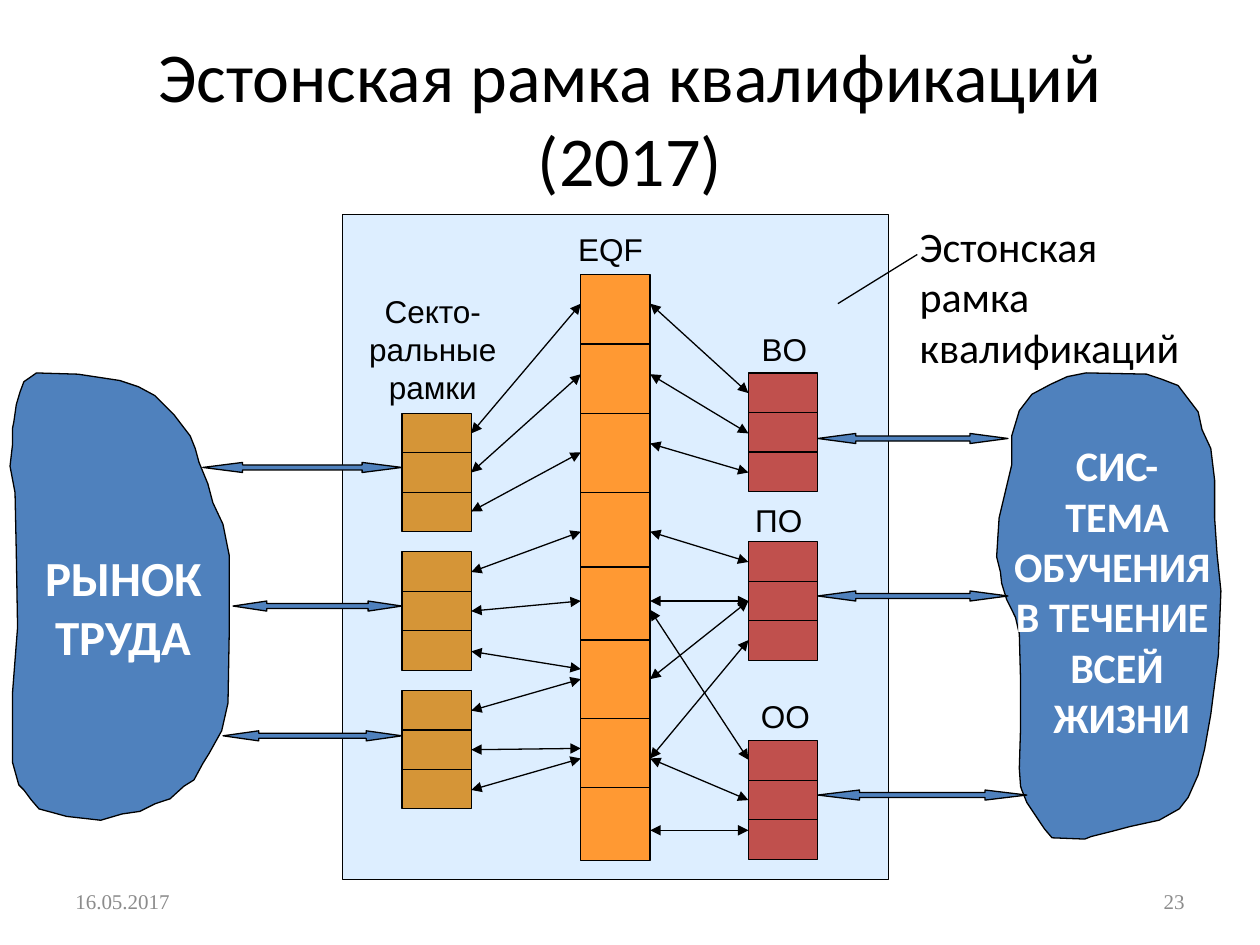
from lxml.etree import SubElement
from pptx import Presentation
from pptx.dml.color import RGBColor
from pptx.enum.shapes import MSO_CONNECTOR as Connector, MSO_SHAPE as Preset
from pptx.enum.text import MSO_ANCHOR as Anchor, PP_ALIGN as Align
from pptx.oxml.ns import qn
from pptx.util import Inches, Pt

BLACK, WHITE, BLUE = "000000", "FFFFFF", "4F81BD"
CELL_WIDTH = 0.55
SECTOR_LEFT, EQF_LEFT, LEVEL_LEFT = 3.19, 4.61, 5.94
SECTOR_RIGHT, EQF_RIGHT, LEVEL_RIGHT = (
    left + CELL_WIDTH for left in (SECTOR_LEFT, EQF_LEFT, LEVEL_LEFT))
BLOCK_HEIGHT = 0.94
EQF_TOP, EQF_BOTTOM = 2.18, 6.83
EQF_DIVIDERS = [2.73, 3.28, 3.91, 4.5, 5.08, 5.7, 6.25]
SECTOR_TOPS = [3.28 + 1.1 * i for i in range(3)]
LEVEL_TOPS = [2.96, 4.3, 5.88]

SECTOR_LINKS = [
    (3.44, 2.41), (3.75, 2.97), (4.06, 3.59),
    (4.54, 4.22), (4.85, 4.77), (5.17, 5.31),
    (5.64, 5.39), (5.95, 5.94), (6.27, 6.02),
]
LEVEL_LINKS = [
    (2.41, 3.12), (2.97, 3.44), (3.52, 3.75),
    (4.22, 4.46), (4.77, 4.77), (5.39, 4.77), (6.02, 5.08),
    (4.84, 6.03), (6.02, 6.35), (6.59, 6.59),
]
EXCHANGES = [
    (1.61, 3.67, SECTOR_LEFT), (1.85, 4.77, SECTOR_LEFT), (1.77, 5.8, SECTOR_LEFT),
    (LEVEL_RIGHT, 3.44, 8), (LEVEL_RIGHT, 4.69, 8), (LEVEL_RIGHT, 6.27, 8.15),
]

LABOUR_MARKET = [
    (0.11, 3.35), (0.13, 3.21), (0.16, 3.11), (0.19, 3.03), (0.29, 2.96),
    (0.62, 2.97), (0.95, 3.02), (1.1, 3.07), (1.23, 3.14), (1.38, 3.29),
    (1.51, 3.46), (1.55, 3.56), (1.58, 3.67), (1.65, 3.84), (1.69, 3.99),
    (1.77, 4.16), (1.82, 4.41), (1.82, 5), (1.81, 5.58), (1.76, 5.8),
    (1.66, 5.98), (1.61, 6.06), (1.54, 6.19), (1.46, 6.24), (1.35, 6.34),
    (1.23, 6.38), (1.11, 6.44), (0.97, 6.46), (0.8, 6.51), (0.53, 6.48),
    (0.31, 6.42), (0.25, 6.35), (0.19, 6.27), (0.15, 6.23), (0.1, 6.05),
    (0.1, 5.5), (0.14, 4.98), (0.13, 4.4), (0.12, 3.91), (0.08, 3.7),
    (0.1, 3.53), (0.1, 3.4),
]
LIFELONG_LEARNING = [
    (7.93, 4.11), (7.98, 3.9), (8.03, 3.69), (8.03, 3.46), (8.09, 3.26),
    (8.19, 3.13), (8.34, 3.05), (8.47, 2.99), (8.62, 2.96), (9.1, 2.97),
    (9.22, 3.01), (9.35, 3.06), (9.51, 3.27), (9.54, 3.41), (9.61, 3.56),
    (9.64, 3.81), (9.64, 4.11), (9.66, 4.4), (9.69, 4.69), (9.67, 5.2),
    (9.61, 5.67), (9.56, 5.95), (9.51, 6.15), (9.43, 6.33), (9.36, 6.42),
    (9.2, 6.51), (8.97, 6.56), (8.82, 6.6), (8.66, 6.64), (8.61, 6.66),
    (8.35, 6.65), (8.29, 6.58), (8.15, 6.37), (8.11, 6.27), (8.1, 6.24),
    (8.09, 6.1), (8.1, 5.78), (8.1, 5.4), (8.09, 5.03), (8.06, 4.9),
    (7.99, 4.76), (7.95, 4.63), (7.94, 4.54), (7.91, 4.42), (7.92, 4.26),
]


def color(value):
    return RGBColor.from_string(value)


def paint(figure, fill):
    figure.shadow.inherit = False
    figure.fill.solid()
    figure.fill.fore_color.rgb = color(fill)
    figure.line.color.rgb = color(BLACK)
    figure.line.width = Pt(0.75)


def add_box(slide, left, top, width, height, fill, preset=Preset.RECTANGLE):
    box = slide.shapes.add_shape(
        preset, Inches(left), Inches(top), Inches(width), Inches(height))
    paint(box, fill)
    return box


def add_blob(slide, outline):
    builder = slide.shapes.build_freeform(
        Inches(outline[0][0]), Inches(outline[0][1]))
    builder.add_line_segments(
        [(Inches(x), Inches(y)) for x, y in outline[1:]], close=True)
    paint(builder.convert_to_shape(), BLUE)


def add_line(slide, x1, y1, x2, y2, arrows=False):
    line = slide.shapes.add_connector(
        Connector.STRAIGHT, Inches(x1), Inches(y1), Inches(x2), Inches(y2))
    line.line.color.rgb = color(BLACK)
    line.line.width = Pt(0.75)
    properties = line.element.spPr
    if arrows:
        stroke = properties.find(qn("a:ln"))
        for end in ("a:headEnd", "a:tailEnd"):
            SubElement(stroke, qn(end), type="triangle")
    SubElement(properties, qn("a:effectLst"))


def add_stack(slide, left, top, height, dividers, fill):
    add_box(slide, left, top, CELL_WIDTH, height, fill)
    for y in dividers:
        add_line(slide, left, y, left + CELL_WIDTH, y)


def add_block(slide, left, top, fill):
    dividers = [top + BLOCK_HEIGHT * i / 3 for i in (1, 2)]
    add_stack(slide, left, top, BLOCK_HEIGHT, dividers, fill)


def add_exchange(slide, left, top, right):
    width, height = right - left, 0.08
    arrow = add_box(slide, left, top, width, height, BLUE, Preset.LEFT_RIGHT_ARROW)
    arrow.adjustments[0] = 0.5
    arrow.adjustments[1] = width / 5 / height


def write(paragraph, text, size, font, ink, bold=False):
    run = paragraph.add_run()
    run.text = text
    run.font.size = Pt(size)
    run.font.name = font
    run.font.bold = bold
    run.font.color.rgb = color(ink)


def add_label(slide, left, top, width, height, lines, size=18, font="Arial",
              ink=BLACK, bold=False, align=Align.CENTER, wrap=False,
              anchor=Anchor.TOP):
    frame = slide.shapes.add_textbox(
        Inches(left), Inches(top), Inches(width), Inches(height)).text_frame
    frame.word_wrap = wrap
    frame.vertical_anchor = anchor
    for i, text in enumerate(lines):
        paragraph = frame.add_paragraph() if i else frame.paragraphs[0]
        paragraph.alignment = align
        write(paragraph, text, size, font, ink, bold)


def add_title(slide, text):
    title = slide.shapes.title
    title.left, title.top = Inches(0.5), Inches(0.3)
    title.width, title.height = Inches(9), Inches(1.25)
    frame = title.text_frame
    frame.vertical_anchor = Anchor.MIDDLE
    frame.margin_left = frame.margin_right = Inches(0.05)
    frame.paragraphs[0].alignment = Align.CENTER
    write(frame.paragraphs[0], text, 40, "Calibri", BLACK)


def add_footer(slide, left, text, align):
    add_label(slide, left, 6.95, 2.33, 0.4, [text], 12, "Times New Roman",
              "8C8C8C", align=align, wrap=True, anchor=Anchor.MIDDLE)


def main():
    deck = Presentation()
    deck.slide_width, deck.slide_height = Inches(10), Inches(7.5)
    slide = deck.slides.add_slide(deck.slide_layouts[5])

    add_box(slide, 2.72, 1.7, 4.33, 5.28, "DDEEFF")
    add_title(slide, "Эстонская рамка квалификаций (2017)")
    add_blob(slide, LABOUR_MARKET)
    add_blob(slide, LIFELONG_LEARNING)

    add_stack(slide, EQF_LEFT, EQF_TOP, EQF_BOTTOM - EQF_TOP, EQF_DIVIDERS, "FF9933")
    for top in SECTOR_TOPS:
        add_block(slide, SECTOR_LEFT, top, "D59537")
    for top in LEVEL_TOPS:
        add_block(slide, LEVEL_LEFT, top, "C0504D")
    for sector_y, eqf_y in SECTOR_LINKS:
        add_line(slide, SECTOR_RIGHT, sector_y, EQF_LEFT, eqf_y, arrows=True)
    for eqf_y, level_y in LEVEL_LINKS:
        add_line(slide, EQF_RIGHT, eqf_y, LEVEL_LEFT, level_y, arrows=True)
    for left, top, right in EXCHANGES:
        add_exchange(slide, left, top, right)

    add_label(slide, 3.98, 1.78, 1.73, 0.4, ["EQF"], wrap=True)
    add_label(slide, 2.82, 2.27, 1.23, 1.01, ["Секто-", "pальные", "рамки"])
    add_label(slide, 5.79, 2.57, 0.87, 0.4, ["BO"], wrap=True)
    add_label(slide, 5.89, 3.93, 0.58, 0.4, ["ПO"])
    add_label(slide, 5.94, 5.48, 0.77, 0.4, ["OO"], align=Align.LEFT, wrap=True)
    add_label(slide, 0.25, 4.3, 1.46, 1.04, ["РЫНОК", "ТРУДА"],
              28, "Calibri", WHITE, True)
    add_label(slide, 7.94, 3.44, 1.85, 2.52,
              ["СИС-", "ТЕМА", "ОБУЧЕНИЯ ", "В ТЕЧЕНИЕ ", "ВСЕЙ", " ЖИЗНИ"],
              24, "Calibri", WHITE, True)
    add_label(slide, 7.2, 1.7, 2.27, 1.31, ["Эстонская", "рамка", "квалификаций"],
              24, "Calibri", align=Align.LEFT)
    add_line(slide, 6.65, 2.41, 7.28, 2.02)
    add_footer(slide, 0.5, "16.05.2017", Align.LEFT)
    add_footer(slide, 7.17, "23", Align.RIGHT)

    deck.save("out.pptx")


if __name__ == "__main__":
    main()
